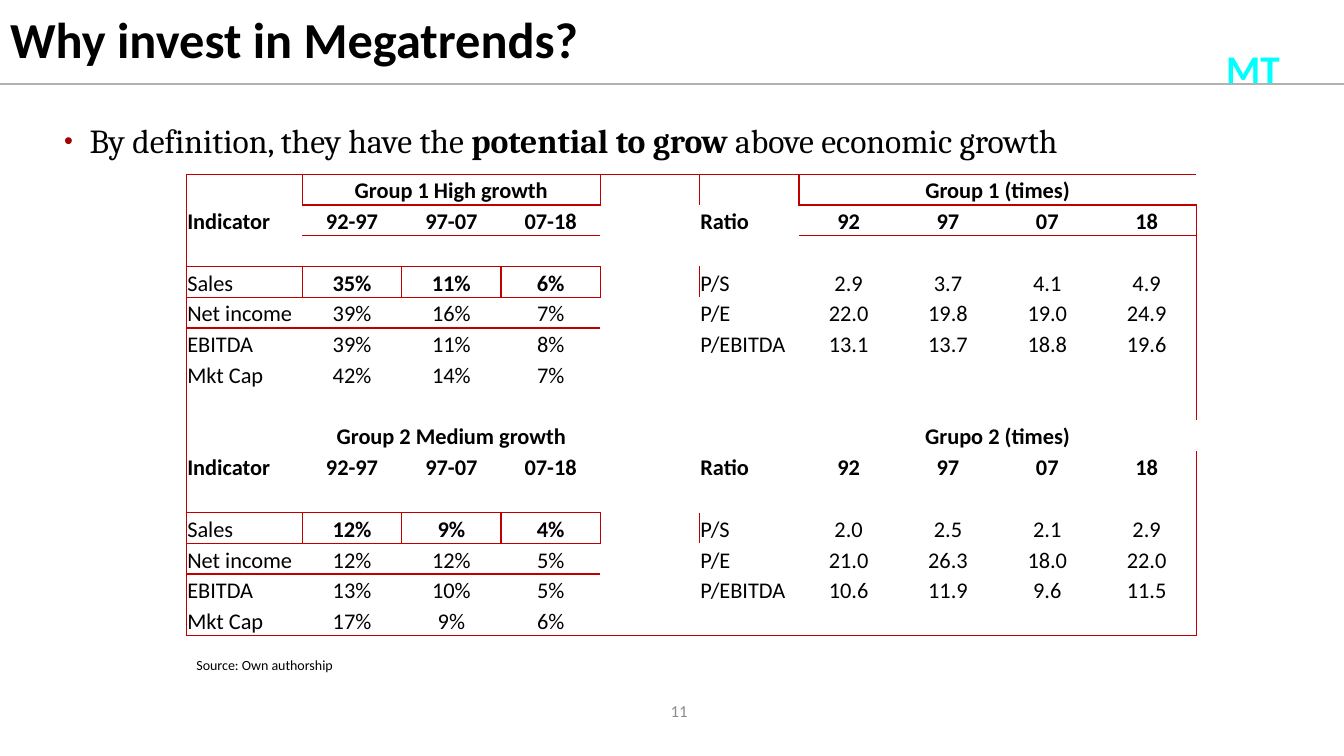
import pptx
import pptx.dml.color
import pptx.enum.text
import pptx.oxml
import pptx.oxml.ns
import pptx.util

Cm, Pt = pptx.util.Cm, pptx.util.Pt
Align, Anchor = pptx.enum.text.PP_ALIGN, pptx.enum.text.MSO_ANCHOR
qn = pptx.oxml.ns.qn
RED, GREY, BLACK = "C00000", "B2B2B2", "000000"
WIDE, HIGH = 33.87, 19.05
NO_GRID = "{2D5ABB26-0587-4C30-8999-92F81FD0307C}"

GROUPS = [
    ("Group 1 High growth", "Group 1 (times)", [
        "Sales|35%|11%|6%||P/S|2.9|3.7|4.1|4.9",
        "Net income|39%|16%|7%||P/E|22.0|19.8|19.0|24.9",
        "EBITDA|39%|11%|8%||P/EBITDA|13.1|13.7|18.8|19.6",
        "Mkt Cap|42%|14%|7%"]),
    ("Group 2 Medium growth", "Grupo 2 (times)", [
        "Sales|12%|9%|4%||P/S|2.0|2.5|2.1|2.9",
        "Net income|12%|12%|5%||P/E|21.0|26.3|18.0|22.0",
        "EBITDA|13%|10%|5%||P/EBITDA|10.6|11.9|9.6|11.5",
        "Mkt Cap|17%|9%|6%"]),
]
HEADS = "Indicator|92-97|97-07|07-18||Ratio|92|97|07|18"
ROWS, COLS, STEP = 15, 10, 8


def color(code):
    return pptx.dml.color.RGBColor.from_string(code)


def node(xml):
    return pptx.oxml.parse_xml(xml.replace(" ", f' {pptx.oxml.ns.nsdecls("a")} ', 1))


def write(frame, text, size=16, font="Calibri", ink=BLACK, bold=False,
          align=Align.LEFT, anchor=Anchor.TOP, wrap=True, lead=None):
    """Fill a frame; parts between asterisks are bold."""
    frame.word_wrap, frame.vertical_anchor = wrap, anchor
    para = frame.paragraphs[0]
    para.alignment, para.line_spacing = align, lead
    for i, part in enumerate(text.split("*")):
        run = para.add_run()
        run.text = part
        run.font.size, run.font.name = Pt(size), font
        run.font.bold = bold or i % 2 == 1
        run.font.color.rgb = color(ink)
    return para


def place(shape, box):
    shape.left, shape.top, shape.width, shape.height = map(Cm, box)


def label(slide, box, text, **style):
    shape = slide.shapes.add_textbox(*map(Cm, box))
    return write(shape.text_frame, text, **style)


def header(slide, box):
    left, top, wide, high = box
    # Rule under the title
    rule = slide.shapes.add_connector(1, Cm(left), Cm(top + high),
                                      Cm(left + wide), Cm(top + high))
    rule.line.color.rgb, rule.line.width = color(GREY), Pt(1.5)
    rule._element.spPr.append(node("<a:effectLst />"))
    # Title
    title = slide.shapes.title
    place(title, box)
    write(title.text_frame, "Why invest in Megatrends?", size=36, bold=True,
          anchor=Anchor.MIDDLE, lead=0.9)
    # Initials at the right
    mark = label(slide, (left + wide - 3.69, top + 0.99, 2.79, 2.03), "MT",
                 size=28, bold=True, ink="00FFFF", align=Align.CENTER, wrap=False)
    edge = node(f'<a:ln w="6600"><a:solidFill><a:srgbClr val="{GREY}"/>'
                '</a:solidFill></a:ln>')
    mark.runs[0]._r.get_or_add_rPr().insert(0, edge)


def bullet(slide, box):
    para = label(slide, box, "By definition, they have the* potential to grow *"
                 "above economic growth", size=24, font="Cambria", lead=0.9)
    props = para._p.get_or_add_pPr()
    props.set("marL", str(Cm(0.64)))
    props.set("indent", str(Cm(-0.64)))
    for xml in ('<a:buClr ><a:srgbClr val="A40000"/></a:buClr>',
                '<a:buSzPct val="75000"/>', '<a:buFont typeface="Arial"/>',
                '<a:buChar char="•"/>'):
        props.append(node(xml))


def frame(edges, top, left, low, right):
    """Mark the outline of a block of cells, from both sides of each edge."""
    for col in range(left, right + 1):
        edges |= {(top, col, "T"), (top - 1, col, "B"),
                  (low, col, "B"), (low + 1, col, "T")}
    for row in range(top, low + 1):
        edges |= {(row, left, "L"), (row, left - 1, "R"),
                  (row, right, "R"), (row, right + 1, "L")}


def fill_grid(grid):
    """Write both groups and return the texts that stand in bold."""
    cells = {}
    for i, (growth, times, lines) in enumerate(GROUPS):
        top = i * STEP
        for col, last, text in ((1, 3, growth), (6, 9, times)):
            grid.cell(top, col).merge(grid.cell(top, last))
            cells[top, col] = text, True
        for row, line in enumerate([HEADS, ""] + lines, top + 1):
            for col, text in enumerate(line.split("|")):
                sales = row == top + 3 and 1 <= col <= 3
                cells[row, col] = text, row == top + 1 or sales
    return cells


def table(slide, box):
    wide, high = box[2:]
    grid = slide.shapes.add_table(ROWS, COLS, *map(Cm, box)).table
    grid.first_row = grid.horz_banding = False
    grid._tbl.tblPr.find(qn("a:tableStyleId")).text = NO_GRID
    for i, col in enumerate(grid.columns):
        col.width = Cm(2.92 if i == 0 else (wide - 2.92) / (COLS - 1))
    for row in grid.rows:
        row.height = Cm(high / ROWS)

    # Red outlines: whole table, first headings, sales figures
    edges = set()
    frame(edges, 0, 0, ROWS - 1, COLS - 1)
    frame(edges, 0, 1, 0, 3)
    frame(edges, 0, 6, 0, 9)
    for row in (3, 3 + STEP):
        for col in range(4):
            frame(edges, row, col, row, col)

    cells = fill_grid(grid)
    for row in range(ROWS):
        for col in range(COLS):
            cell = grid.cell(row, col)
            cell.margin_left = cell.margin_right = cell.margin_top = Cm(0.02)
            cell.margin_bottom = 0
            cell.vertical_anchor = Anchor.BOTTOM
            text, bold = cells.get((row, col), ("", False))
            if text:
                write(cell.text_frame, text, bold=bold, anchor=None, wrap=None,
                      align=Align.LEFT if col in (0, 5) else Align.CENTER)
            else:
                cell.text_frame.paragraphs[0]._p.append(
                    node('<a:endParaRPr sz="1600"/>'))
            for side in "LRTB":
                if (row, col, side) in edges:
                    cell._tc.get_or_add_tcPr().append(node(
                        f'<a:ln{side} w="12700"><a:solidFill><a:srgbClr val="{RED}"/>'
                        f'</a:solidFill></a:ln{side}>'))
            cell.fill.background()


def footer(slide, box):
    left, top, wide, high = box
    label(slide, (left + 4.7, top, 6.96, 0.69), "Source: Own authorship", size=10)
    label(slide, (left + 16.26, top + 0.99, 1.32, 1.02), "11", size=12,
          ink="8C8C8C", align=Align.RIGHT, anchor=Anchor.MIDDLE)


def main():
    deck = pptx.Presentation()
    deck.slide_width, deck.slide_height = Cm(WIDE), Cm(HIGH)
    slide = deck.slides.add_slide(deck.slide_layouts[5])
    header(slide, (0, 0, WIDE, 2.12))
    bullet(slide, (1.37, 3.02, 30.5, 1.37))
    table(slide, (4.7, 4.39, 25.45, 11.63))
    footer(slide, (0, 16.41, WIDE, 2.64))
    deck.save("out.pptx")


if __name__ == "__main__":
    main()
